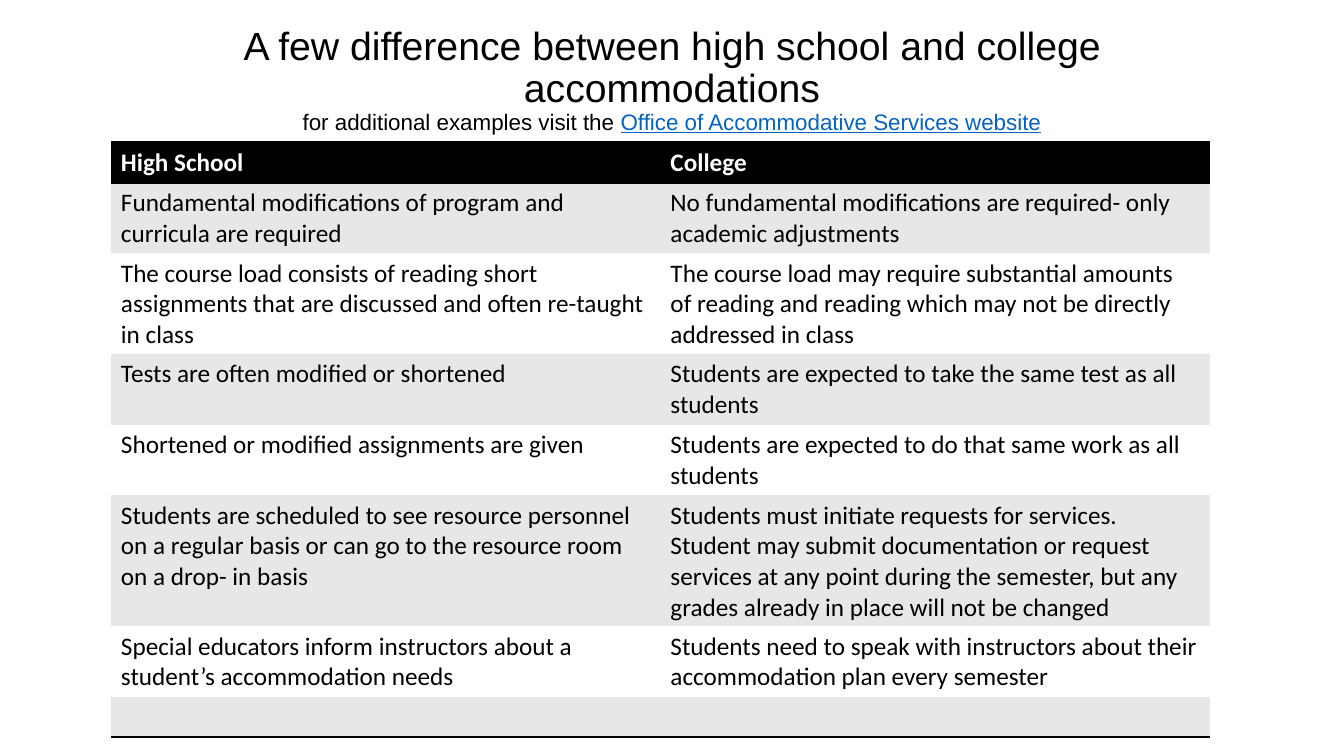
from dataclasses import dataclass

from lxml import etree
from pptx import Presentation
from pptx.dml.color import RGBColor
from pptx.enum.text import MSO_ANCHOR, PP_ALIGN
from pptx.oxml.ns import qn
from pptx.util import Inches, Pt

CENTER = PP_ALIGN.CENTER
MIDDLE = MSO_ANCHOR.MIDDLE


@dataclass(frozen=True)
class Theme:
    black: str = "000000"
    white: str = "FFFFFF"
    band: str = "E7E7E7"
    link: str = "0563C1"
    title_font: str = "Arial"
    table_font: str = "Calibri"
    title_size: int = 28
    subtitle_size: int = 16
    table_size: int = 18
    rule_width: int = 2


THEME = Theme()
SLIDE_WIDTH, SLIDE_HEIGHT = 13.33, 7.5
LEFT = 1.1
TITLE_BOX = (LEFT, 0.19, 11.13, 1.22)
TABLE_BOX = (LEFT, 1.41, 10.9, 4.71)
ROW_HEIGHTS = (0.39, 0.55, 0.78, 0.55, 0.55, 1.02, 0.55, 0.32)

ROWS = (
    ("High School", "College"),
    ("Fundamental modifications of program and curricula are required",
     "No fundamental modifications are required- only academic adjustments"),
    ("The course load consists of reading short assignments that are discussed "
     "and often re-taught in class",
     "The course load may require substantial amounts of reading and reading "
     "which may not be directly addressed in class"),
    ("Tests are often modified or shortened",
     "Students are expected to take the same test as all students"),
    ("Shortened or modified assignments are given",
     "Students are expected to do that same work as all students"),
    ("Students are scheduled to see resource personnel on a regular basis or "
     "can go to the resource room on a drop- in basis",
     "Students must initiate requests for services. Student may submit "
     "documentation or request services at any point during the semester, but "
     "any grades already in place will not be changed"),
    ("Special educators inform instructors about a student’s accommodation needs",
     "Students need to speak with instructors about their accommodation plan "
     "every semester"),
    ("", ""),
)


def format_font(font, color, **values):
    for name, value in values.items():
        setattr(font, name, value)
    font.color.rgb = RGBColor.from_string(color)


def add_span(para, text, color, **values):
    span = para.add_run()
    span.text = text
    format_font(span.font, color, **values)


def add_title(page, box):
    frame = page.shapes.add_textbox(*map(Inches, box)).text_frame
    frame.word_wrap = True
    frame.vertical_anchor = MIDDLE
    para = frame.paragraphs[0]
    para.alignment = CENTER
    para.line_spacing = 0.9
    small = {"name": THEME.title_font, "size": Pt(THEME.subtitle_size)}
    add_span(para, "A few difference between high school and college accommodations",
             THEME.black, name=THEME.title_font, size=Pt(THEME.title_size))
    para.add_line_break()
    add_span(para, "for additional examples visit the ", THEME.black, **small)
    add_span(para, "Office of Accommodative Services website", THEME.link,
             underline=True, **small)


def set_borders(cell, ruled_sides):
    """Rule the named sides and clear the others."""
    properties = cell._tc.get_or_add_tcPr()
    for index, side in enumerate("LRTB"):
        line = etree.Element(qn(f"a:ln{side}"))
        if side in ruled_sides:
            line.set("w", str(Pt(THEME.rule_width)))
            fill = etree.SubElement(line, qn("a:solidFill"))
            etree.SubElement(fill, qn("a:srgbClr"), val=THEME.black)
        else:
            etree.SubElement(line, qn("a:noFill"))
        properties.insert(index, line)


def add_comparison(page, box):
    columns = len(ROWS[0])
    table = page.shapes.add_table(len(ROWS), columns, *map(Inches, box)).table
    table.first_row = table.horz_banding = False
    for column in table.columns:
        column.width = Inches(box[2] / columns)
    # Black rules above and below the header and under the last row
    ruled_rows = {0: "TB", 1: "T", len(ROWS) - 1: "B"}
    for index, (texts, height) in enumerate(zip(ROWS, ROW_HEIGHTS)):
        table.rows[index].height = Inches(height)
        header = index == 0
        band = THEME.band if index % 2 else THEME.white
        for column, text in enumerate(texts):
            cell = table.cell(index, column)
            cell.fill.solid()
            cell.fill.fore_color.rgb = RGBColor.from_string(
                THEME.black if header else band)
            set_borders(cell, ruled_rows.get(index, ""))
            para = cell.text_frame.paragraphs[0]
            para.font.size = Pt(THEME.table_size)
            if text:
                add_span(para, text, THEME.white if header else THEME.black,
                         name=THEME.table_font, size=Pt(THEME.table_size),
                         bold=header)


def main():
    deck = Presentation()
    deck.slide_width, deck.slide_height = Inches(SLIDE_WIDTH), Inches(SLIDE_HEIGHT)
    page = deck.slides.add_slide(deck.slide_layouts[6])
    add_title(page, TITLE_BOX)
    add_comparison(page, TABLE_BOX)
    deck.save("out.pptx")


if __name__ == "__main__":
    main()
